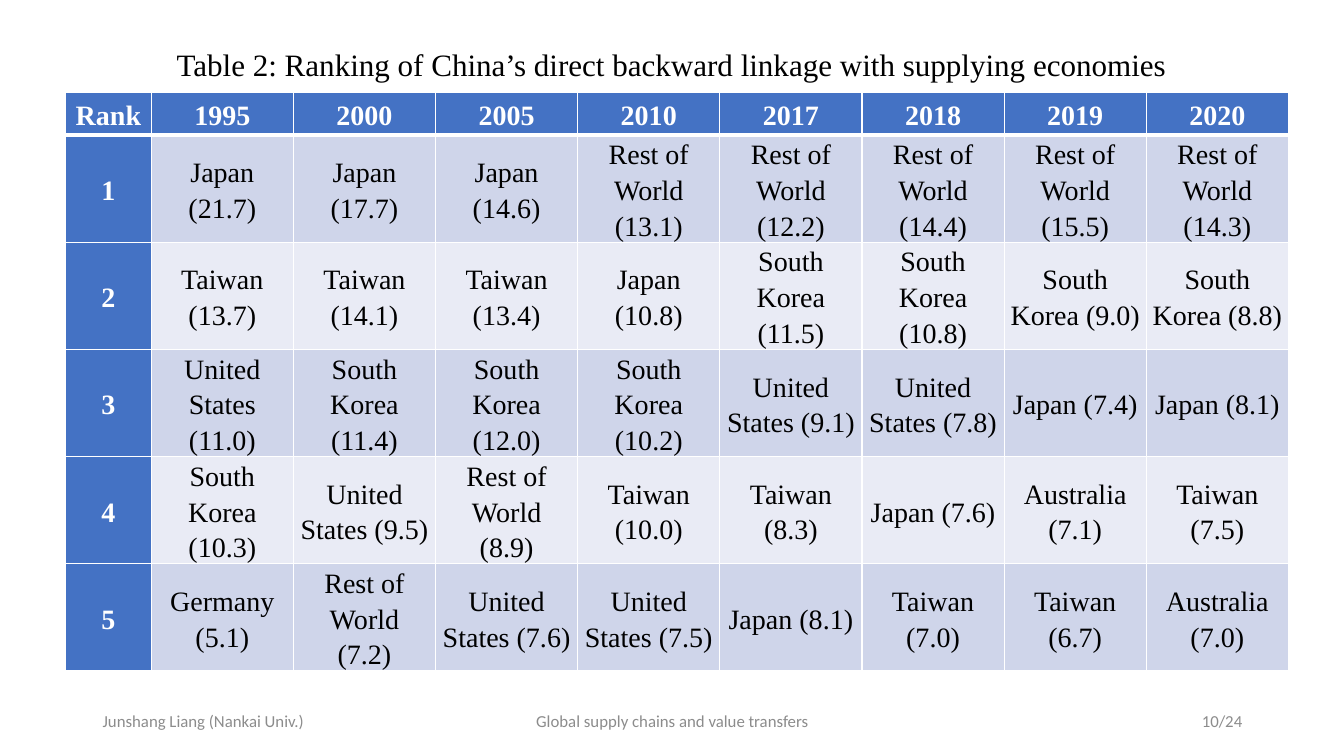
"""Build the slide ranking China's direct backward linkage by supplying economy."""
import pptx
import pptx.dml.color
import pptx.enum.text
import pptx.oxml
import pptx.oxml.ns
import pptx.util

ALIGN = pptx.enum.text.PP_ALIGN
MIDDLE = pptx.enum.text.MSO_ANCHOR.MIDDLE
TOP = pptx.enum.text.MSO_ANCHOR.TOP
Inches = pptx.util.Inches
Pt = pptx.util.Pt


def color(value):
    """Turn a hex string into a colour."""
    return pptx.dml.color.RGBColor.from_string(value)


def write(paragraph, text, font_name, size, hex_color, alignment, bold=False):
    """Fill one paragraph with evenly formatted text."""
    paragraph.text = text
    paragraph.alignment = alignment
    paragraph.font.name = font_name
    paragraph.font.size = Pt(size)
    paragraph.font.bold = bold
    paragraph.font.color.rgb = color(hex_color)


SERIF = "Times New Roman"
HEADER_FILL = "4472C4"
BAND_FILLS = ["E9EBF5", "CFD5EA"]
RANKING = [
    ["Rank", "1995", "2000", "2005", "2010", "2017", "2018", "2019", "2020"],
    ["1", "Japan (21.7)", "Japan (17.7)", "Japan (14.6)", "Rest of World (13.1)",
     "Rest of World (12.2)", "Rest of World (14.4)", "Rest of World (15.5)", "Rest of World (14.3)"],
    ["2", "Taiwan (13.7)", "Taiwan (14.1)", "Taiwan (13.4)", "Japan (10.8)",
     "South Korea (11.5)", "South Korea (10.8)", "South Korea (9.0)", "South Korea (8.8)"],
    ["3", "United States (11.0)", "South Korea (11.4)", "South Korea (12.0)", "South Korea (10.2)",
     "United States (9.1)", "United States (7.8)", "Japan (7.4)", "Japan (8.1)"],
    ["4", "South Korea (10.3)", "United States (9.5)", "Rest of World (8.9)", "Taiwan (10.0)",
     "Taiwan (8.3)", "Japan (7.6)", "Australia (7.1)", "Taiwan (7.5)"],
    ["5", "Germany (5.1)", "Rest of World (7.2)", "United States (7.6)", "United States (7.5)",
     "Japan (8.1)", "Taiwan (7.0)", "Taiwan (6.7)", "Australia (7.0)"],
]
COLUMN_WIDTHS = [0.85] + [1.41] * 8
ROW_HEIGHTS = [0.42] + [1.06] * 5

presentation = pptx.Presentation()
presentation.slide_width = Inches(13.33)
presentation.slide_height = Inches(7.5)
slide = presentation.slides.add_slide(presentation.slide_layouts[6])

table = slide.shapes.add_table(
    len(ROW_HEIGHTS), len(COLUMN_WIDTHS), Inches(0.65), Inches(0.92),
    Inches(sum(COLUMN_WIDTHS)), Inches(sum(ROW_HEIGHTS))).table
table.first_col = True
for column, width in zip(table.columns, COLUMN_WIDTHS):
    column.width = Inches(width)
for row, height in zip(table.rows, ROW_HEIGHTS):
    row.height = Inches(height)

for row_index, entries in enumerate(RANKING):
    for column_index, text in enumerate(entries):
        cell = table.cell(row_index, column_index)
        is_header = row_index == 0 or column_index == 0
        cell.vertical_anchor = MIDDLE
        cell.margin_left = cell.margin_right = Inches(0.06)
        cell.margin_top = cell.margin_bottom = 0
        paragraph = cell.text_frame.paragraphs[0]
        write(paragraph, text, SERIF, 20, "FFFFFF" if is_header else "000000", ALIGN.CENTER, is_header)
        paragraph.line_spacing = 1.15
        paragraph.space_after = Pt(8)
        border_widths = {"L": 1, "R": 1, "T": 3 if row_index == 1 else 1, "B": 3 if row_index == 0 else 1}
        for side, width in border_widths.items():
            cell._tc.get_or_add_tcPr().append(pptx.oxml.parse_xml(
                f'<a:ln{side} {pptx.oxml.ns.nsdecls("a")} w="{Pt(width)}">'
                f'<a:solidFill><a:srgbClr val="FFFFFF"/></a:solidFill></a:ln{side}>'))
        cell.fill.solid()
        cell.fill.fore_color.rgb = color(HEADER_FILL if is_header else BAND_FILLS[row_index % 2])

TEXT_BOXES = [
    ("Junshang Liang (Nankai Univ.)", 0.92, 6.95, 3, 0.4, "Calibri", 12, "8C8C8C", ALIGN.LEFT, MIDDLE),
    ("Global supply chains and value transfers", 4.42, 6.95, 4.5, 0.4, "Calibri", 12, "8C8C8C", ALIGN.CENTER, MIDDLE),
    ("10/24", 9.42, 6.95, 3, 0.4, "Calibri", 12, "8C8C8C", ALIGN.RIGHT, MIDDLE),
    ("Table 2: Ranking of China’s direct backward linkage with supplying economies",
     1.3, 0.44, 10.73, 0.47, SERIF, 22.2, "000000", ALIGN.CENTER, TOP),
]
for text, left, top, width, height, font_name, size, hex_color, alignment, anchor in TEXT_BOXES:
    text_box = slide.shapes.add_textbox(Inches(left), Inches(top), Inches(width), Inches(height))
    text_frame = text_box.text_frame
    text_frame.word_wrap = True
    text_frame.vertical_anchor = anchor
    write(text_frame.paragraphs[0], text, font_name, size, hex_color, alignment)

title_paragraph = text_frame.paragraphs[0]
title_paragraph.line_spacing = 0.9
title_paragraph.space_before = Pt(10)

presentation.save("out.pptx")
